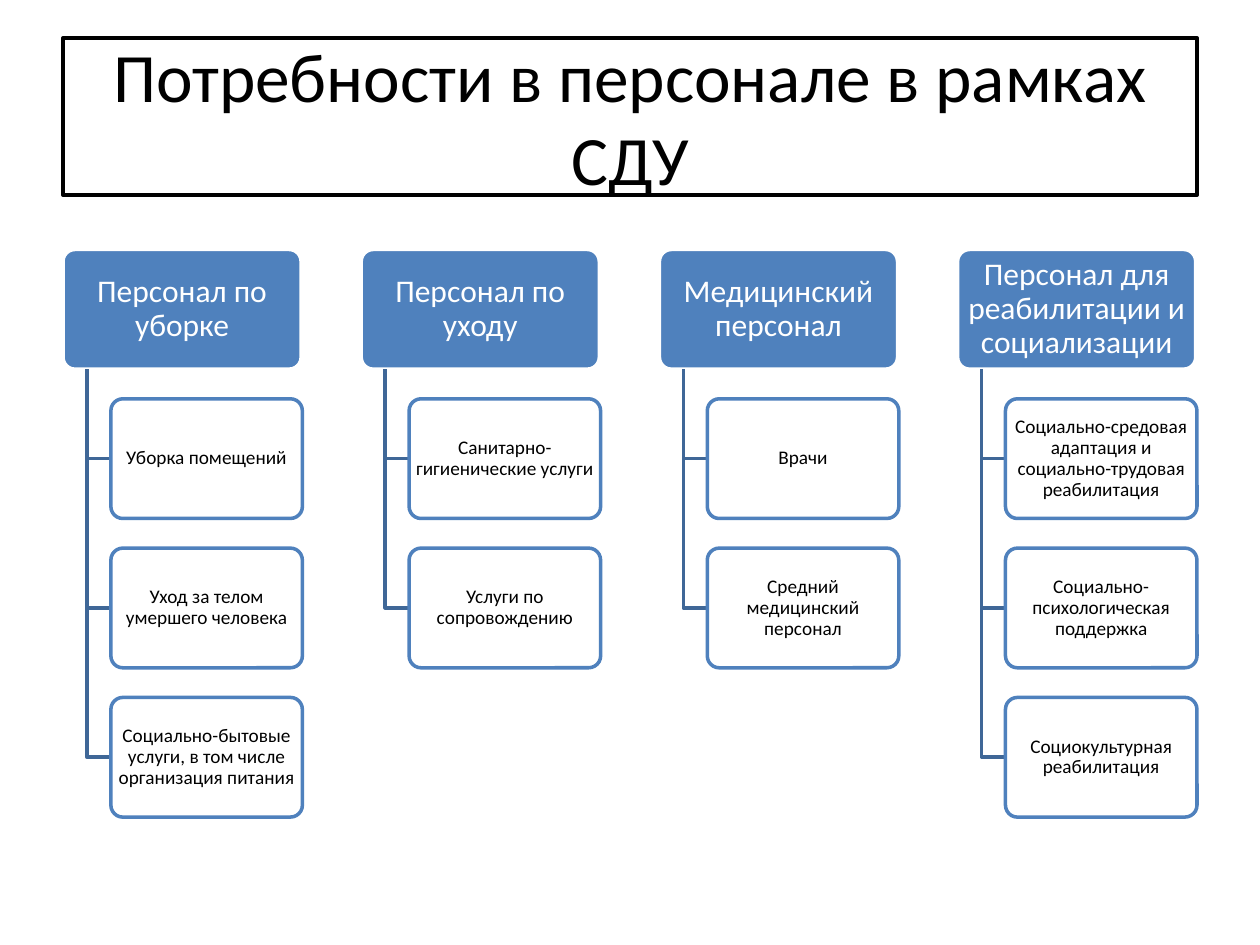
from lxml.etree import SubElement
from pptx import Presentation
from pptx.dml.color import RGBColor
from pptx.enum.shapes import MSO_SHAPE
from pptx.enum.text import MSO_ANCHOR, MSO_AUTO_SIZE, PP_ALIGN
from pptx.oxml.ns import qn
from pptx.util import Inches, Pt

BLACK = RGBColor(0x00, 0x00, 0x00)
WHITE = RGBColor(0xFF, 0xFF, 0xFF)
BLUE = RGBColor(0x4F, 0x81, 0xBD)
DARK_BLUE = RGBColor(0x3F, 0x67, 0x97)

TITLE = "Потребности в персонале в рамках СДУ"
GROUPS = {
    "Персонал по уборке": [
        "Уборка помещений",
        "Уход за телом умершего человека",
        "Социально-бытовые услуги, в том числе организация питания",
    ],
    "Персонал по уходу": [
        "Санитарно-гигиенические услуги",
        "Услуги по сопровождению",
    ],
    "Медицинский персонал": [
        "Врачи",
        "Средний медицинский персонал",
    ],
    "Персонал для реабилитации и социализации": [
        "Социально-средовая адаптация и социально-трудовая реабилитация",
        "Социально-психологическая поддержка",
        "Социокультурная реабилитация",
    ],
}

LEFT, TOP = 0.5, 1.98
COLUMN_STEP = 7.1 / 3
ROW_STEP = 2.37 / 2
BOX_HEIGHT = 0.95
HEAD_WIDTH, ITEM_WIDTH = 1.89, 1.52
STEM_OFFSET, ITEM_OFFSET = 0.19, 0.38


class StaffSlide:
    font_name = "Calibri"
    line_width = Pt(2)

    def __init__(self, deck):
        self.page = deck.slides.add_slide(deck.slide_layouts[5])

    def outline(self, shape, color):
        shape.line.color.rgb = color
        shape.line.width = self.line_width

    def label(self, shape, text, size, color, margins, spacing):
        frame = shape.text_frame
        frame_format = {
            "word_wrap": True,
            "auto_size": MSO_AUTO_SIZE.NONE,
            "vertical_anchor": MSO_ANCHOR.MIDDLE,
            "margin_left": Inches(margins[0]),
            "margin_right": Inches(margins[0]),
            "margin_top": Inches(margins[1]),
            "margin_bottom": Inches(margins[1]),
        }
        for name, value in frame_format.items():
            setattr(frame, name, value)
        para = frame.paragraphs[0]
        para.alignment = PP_ALIGN.CENTER
        para.line_spacing = spacing
        span = para.add_run()
        span.text = text
        span.font.color.rgb = color
        for name, value in {"name": self.font_name, "size": Pt(size)}.items():
            setattr(span.font, name, value)

    def title(self, text):
        box = self.page.shapes.title
        place = {"left": 0.5, "top": 0.3, "width": 9, "height": 1.25}
        for name, value in place.items():
            setattr(box, name, Inches(value))
        box.fill.solid()
        box.fill.fore_color.rgb = WHITE
        self.outline(box, BLACK)
        self.label(box, text, 39.6, BLACK, (0.1, 0.05), 1.0)

    def rounded_box(self, left, top, width, fill, line):
        box = self.page.shapes.add_shape(
            MSO_SHAPE.ROUNDED_RECTANGLE,
            Inches(left), Inches(top), Inches(width), Inches(BOX_HEIGHT),
        )
        box.adjustments[0] = 0.1
        box.shadow.inherit = False
        box.fill.solid()
        box.fill.fore_color.rgb = fill
        self.outline(box, line)
        return box

    def head(self, left, text):
        box = self.rounded_box(left, TOP, HEAD_WIDTH, BLUE, WHITE)
        self.label(box, text, 18, WHITE, (0.04, 0.03), 0.9)

    def item(self, left, top, text):
        box = self.rounded_box(left, top, ITEM_WIDTH, WHITE, BLUE)
        color = box.element.spPr.find(qn("a:solidFill"))[0]
        SubElement(color, qn("a:alpha"), val="90000")
        self.label(box, text, 11, BLACK, (0.02, 0.02), 0.9)

    def elbow(self, left, top, right, bottom):
        builder = self.page.shapes.build_freeform(Inches(left), Inches(top))
        corners = [(left, bottom), (right, bottom)]
        builder.add_line_segments(
            [(Inches(x), Inches(y)) for x, y in corners], close=False
        )
        shape = builder.convert_to_shape()
        shape.shadow.inherit = False
        shape.fill.background()
        self.outline(shape, DARK_BLUE)

    def group(self, left, name, items):
        self.head(left, name)
        item_left = left + ITEM_OFFSET
        for row, text in enumerate(items, start=1):
            top = TOP + row * ROW_STEP
            self.elbow(left + STEM_OFFSET, TOP + BOX_HEIGHT,
                       item_left, top + BOX_HEIGHT / 2)
            self.item(item_left, top, text)


def main():
    deck = Presentation()
    deck.slide_width = Inches(10)
    deck.slide_height = Inches(7.5)
    slide = StaffSlide(deck)
    slide.title(TITLE)
    for column, (name, items) in enumerate(GROUPS.items()):
        slide.group(LEFT + column * COLUMN_STEP, name, items)
    deck.save("out.pptx")


if __name__ == "__main__":
    main()
